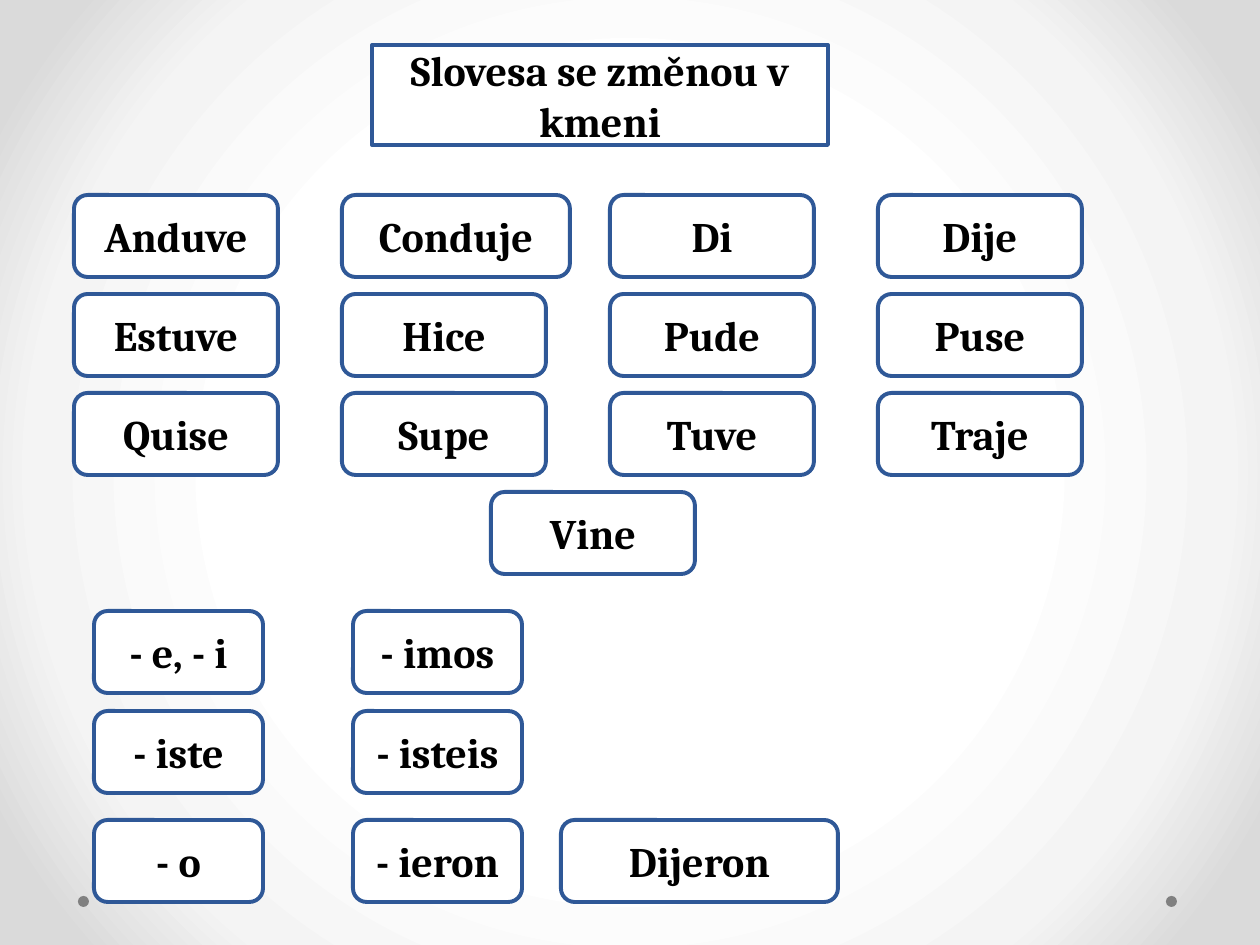
from dataclasses import dataclass

from pptx import Presentation
from pptx.dml.color import RGBColor
from pptx.enum.shapes import MSO_SHAPE
from pptx.enum.text import MSO_ANCHOR, MSO_AUTO_SIZE, PP_ALIGN
from pptx.oxml import parse_xml
from pptx.oxml.ns import nsdecls
from pptx.util import Pt

EMU_PER_INCH, PX_PER_INCH = 914400, 126
BOX_HEIGHT = 82
VERB_WIDTH, WIDE_VERB_WIDTH, ENDING_WIDTH = 204, 228, 169
VERB_LEFT, VERB_TOP, VERB_COLUMN_STEP, VERB_ROW_STEP = 74, 195, 268, 99
ENDING_LEFT, ENDING_COLUMN_STEP = 94, 259
DOT_SIZE = 11

VERBS = [
    ["Anduve", "Conduje", "Di", "Dije"],
    ["Estuve", "Hice", "Pude", "Puse"],
    ["Quise", "Supe", "Tuve", "Traje"],
]
ENDINGS = {
    611: ["- e, - i", "- imos"],
    711: ["- iste", "- isteis"],
    820: ["- o", "- ieron"],
}
BACKGROUND_STOPS = [(50, "FFFFFF"), (76, "F4F4F4"), (92, "DADADA")]


@dataclass
class Label:
    text: str
    left: int
    top: int
    width: int
    height: int = BOX_HEIGHT


def px(length: int) -> int:
    return round(length * EMU_PER_INCH / PX_PER_INCH)


def color(value: str) -> RGBColor:
    return RGBColor.from_string(value)


def set_background(page) -> None:
    stops = "".join(
        f'<a:gs pos="{position * 1000}"><a:srgbClr val="{value}"/></a:gs>'
        for position, value in BACKGROUND_STOPS
    )
    page.element.cSld.insert(0, parse_xml(
        f'<p:bg {nsdecls("p", "a")}><p:bgPr><a:gradFill rotWithShape="1">'
        f'<a:gsLst>{stops}</a:gsLst><a:path path="circle">'
        '<a:fillToRect l="50000" t="50000" r="50000" b="50000"/></a:path>'
        '</a:gradFill><a:effectLst/></p:bgPr></p:bg>'
    ))


def add_dot(page, left: int, top: int) -> None:
    dot = page.shapes.add_shape(
        MSO_SHAPE.OVAL, px(left), px(top), px(DOT_SIZE), px(DOT_SIZE))
    dot.shadow.inherit = False
    dot.fill.solid()
    dot.fill.fore_color.rgb = color("808080")
    dot.line.fill.background()


def format_box(box, text: str) -> None:
    box.fill.solid()
    box.fill.fore_color.rgb = color("FFFFFF")
    box.line.color.rgb = color("2F5897")
    box.line.width = Pt(2.25)
    frame = box.text_frame
    frame.text = text
    frame.word_wrap = True
    frame.auto_size = MSO_AUTO_SIZE.NONE
    frame.vertical_anchor = MSO_ANCHOR.MIDDLE
    paragraph = frame.paragraphs[0]
    paragraph.alignment = PP_ALIGN.CENTER
    font = paragraph.runs[0].font
    font.name, font.size, font.bold = "Cambria", Pt(24), True
    font.color.rgb = color("000000")


def add_label(page, label: Label) -> None:
    box = page.shapes.add_shape(
        MSO_SHAPE.ROUNDED_RECTANGLE,
        px(label.left), px(label.top), px(label.width), px(label.height))
    box.shadow.inherit = False
    format_box(box, label.text)


def set_title(page, label: Label) -> None:
    """Turn the title placeholder into a rounded box."""
    title = page.shapes.title
    title.left, title.top = px(label.left), px(label.top)
    title.width, title.height = px(label.width), px(label.height)
    title.element.spPr.append(parse_xml(
        f'<a:prstGeom {nsdecls("a")} prst="roundRect"><a:avLst/></a:prstGeom>'))
    format_box(title, label.text)


def verb_labels() -> list[Label]:
    return [
        Label(verb,
              VERB_LEFT + column * VERB_COLUMN_STEP,
              VERB_TOP + row * VERB_ROW_STEP,
              WIDE_VERB_WIDTH if verb == "Conduje" else VERB_WIDTH)
        for row, verbs in enumerate(VERBS)
        for column, verb in enumerate(verbs)
    ]


def ending_labels() -> list[Label]:
    return [
        Label(ending, ENDING_LEFT + column * ENDING_COLUMN_STEP, top, ENDING_WIDTH)
        for top, endings in ENDINGS.items()
        for column, ending in enumerate(endings)
    ]


def main() -> None:
    deck = Presentation()
    deck.slide_width, deck.slide_height = px(1260), px(945)
    page = deck.slides.add_slide(deck.slide_layouts[5])
    set_background(page)
    for left in (78, 1166):
        add_dot(page, left, 896)
    set_title(page, Label("Slovesa se změnou v kmeni", 372, 45, 456, 100))
    single_labels = [
        Label("Vine", 491, 492, VERB_WIDTH),
        Label("Dijeron", 561, 820, 277),
    ]
    for label in verb_labels() + ending_labels() + single_labels:
        add_label(page, label)
    deck.save("out.pptx")


if __name__ == "__main__":
    main()
